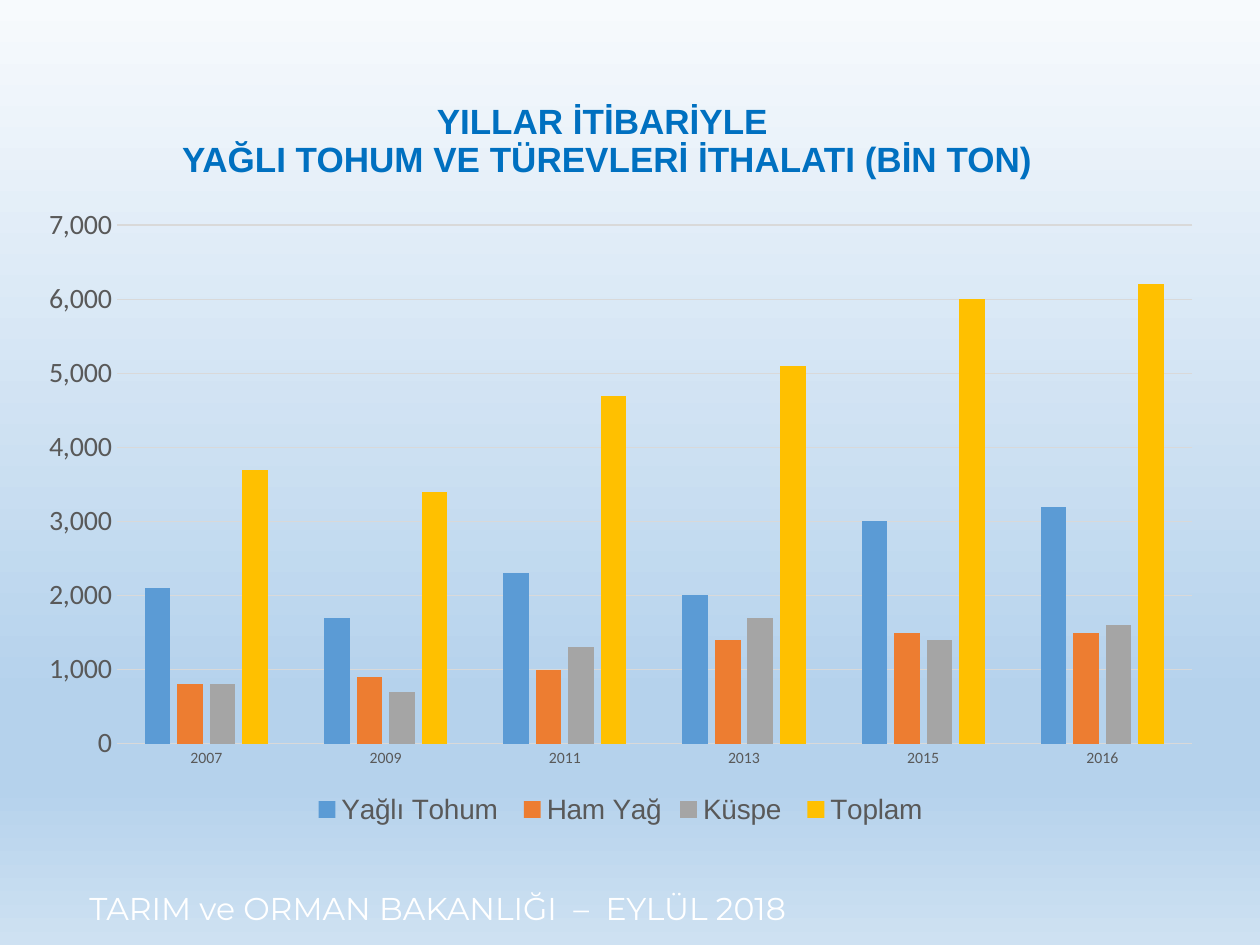
from copy import deepcopy

from pptx import Presentation
from pptx.chart.data import CategoryChartData
from pptx.dml.color import RGBColor
from pptx.enum.chart import XL_CHART_TYPE as ChartType
from pptx.enum.chart import XL_LEGEND_POSITION as LegendPosition
from pptx.enum.chart import XL_TICK_MARK as TickMark
from pptx.enum.text import MSO_ANCHOR as Anchor
from pptx.enum.text import PP_ALIGN as Align
from pptx.oxml.ns import qn
from pptx.util import Pt

TITLE_BLUE = RGBColor(0x00, 0x70, 0xC0)
WHITE = RGBColor(0xFF, 0xFF, 0xFF)
BLACK = RGBColor(0x00, 0x00, 0x00)
LABEL_GRAY = RGBColor(0x59, 0x59, 0x59)
GRID_GRAY = RGBColor(0xD9, 0xD9, 0xD9)
BACKGROUND_STOPS = [
    (0, RGBColor(0xF7, 0xFA, 0xFD)),
    (74, RGBColor(0xB5, 0xD2, 0xEC)),
    (83, RGBColor(0xB5, 0xD2, 0xEC)),
    (100, RGBColor(0xCE, 0xE1, 0xF2)),
]

YEARS = ["2007", "2009", "2011", "2013", "2015", "2016"]
IMPORTS = [
    ("Yağlı Tohum ", [2100, 1700, 2300, 2000, 3000, 3200], RGBColor(0x5B, 0x9B, 0xD5)),
    ("Ham Yağ", [800, 900, 1000, 1400, 1500, 1500], RGBColor(0xED, 0x7D, 0x31)),
    ("Küspe ", [800, 700, 1300, 1700, 1400, 1600], RGBColor(0xA5, 0xA5, 0xA5)),
    ("Toplam", [3700, 3400, 4700, 5100, 6000, 6200], RGBColor(0xFF, 0xC0, 0x00)),
]


def set_font(font, name, size, color, bold=False):
    font.name = name
    font.size = Pt(size)
    font.color.rgb = color
    font.bold = bold


def set_line(line, color):
    line.color.rgb = color
    line.width = Pt(0.75)


def paint_background(slide):
    fill = slide.background.fill
    fill.gradient()
    fill.gradient_angle = 270
    stop_list = next(slide.element.iter(qn("a:gsLst")))
    for _ in range(len(BACKGROUND_STOPS) - len(stop_list)):
        stop_list.append(deepcopy(stop_list[0]))
    for stop, (percent, color) in zip(fill.gradient_stops, BACKGROUND_STOPS):
        stop.position = percent / 100
        stop.color.rgb = color


def add_text(slide, box, text, font, align=Align.LEFT, anchor=Anchor.TOP, spacing=None):
    shape = slide.shapes.add_textbox(*map(Pt, box))
    frame = shape.text_frame
    frame.word_wrap = True
    frame.vertical_anchor = anchor
    frame.text = text
    paragraph = frame.paragraphs[0]
    paragraph.alignment = align
    paragraph.line_spacing = spacing
    for run in paragraph.runs:
        set_font(run.font, *font)


def style_axis(axis, size):
    axis.major_tick_mark = TickMark.NONE
    axis.minor_tick_mark = TickMark.NONE
    set_font(axis.tick_labels.font, "Calibri", size, LABEL_GRAY)


def add_import_chart(slide, box):
    data = CategoryChartData(number_format="#,##0")
    data.categories = YEARS
    for name, values, _ in IMPORTS:
        data.add_series(name, values)
    frame = slide.shapes.add_chart(ChartType.COLUMN_CLUSTERED, *map(Pt, box), data)
    chart = frame.chart
    chart.has_title = False
    set_font(chart.font, "Calibri", 10, BLACK)

    plot = chart.plots[0]
    plot.gap_width = 219
    plot.overlap = -27
    plot.vary_by_categories = False
    for series, (_, _, color) in zip(plot.series, IMPORTS):
        series.format.fill.solid()
        series.format.fill.fore_color.rgb = color

    style_axis(chart.category_axis, 9)
    set_line(chart.category_axis.format.line, GRID_GRAY)

    value_axis = chart.value_axis
    style_axis(value_axis, 16)
    value_axis.format.line.fill.background()
    value_axis.minimum_scale = 0
    value_axis.maximum_scale = 7000
    value_axis.major_unit = 1000
    value_axis.tick_labels.number_format = "#,##0"
    value_axis.tick_labels.number_format_is_linked = False
    set_line(value_axis.major_gridlines.format.line, GRID_GRAY)

    chart.has_legend = True
    chart.legend.position = LegendPosition.BOTTOM
    chart.legend.include_in_layout = False
    set_font(chart.legend.font, "Arial", 16, LABEL_GRAY)


def main():
    presentation = Presentation()
    presentation.slide_width = Pt(720)
    presentation.slide_height = Pt(540)
    slide = presentation.slides.add_slide(presentation.slide_layouts[6])
    paint_background(slide)
    add_text(
        slide, (44, 504.5, 676, 29), "TARIM ve ORMAN BAKANLIĞI  –  EYLÜL 2018",
        ("Montserrat", 18, WHITE),
    )
    add_text(
        slide, (36.7, 28.8, 620.6, 104.4),
        "YILLAR İTİBARİYLE \vYAĞLI TOHUM VE TÜREVLERİ İTHALATI (BİN TON)",
        ("Arial", 20, TITLE_BLUE, True), Align.CENTER, Anchor.MIDDLE, 0.9,
    )
    add_import_chart(slide, (14.4, 111.6, 680.4, 362.9))
    presentation.save("out.pptx")


if __name__ == "__main__":
    main()
